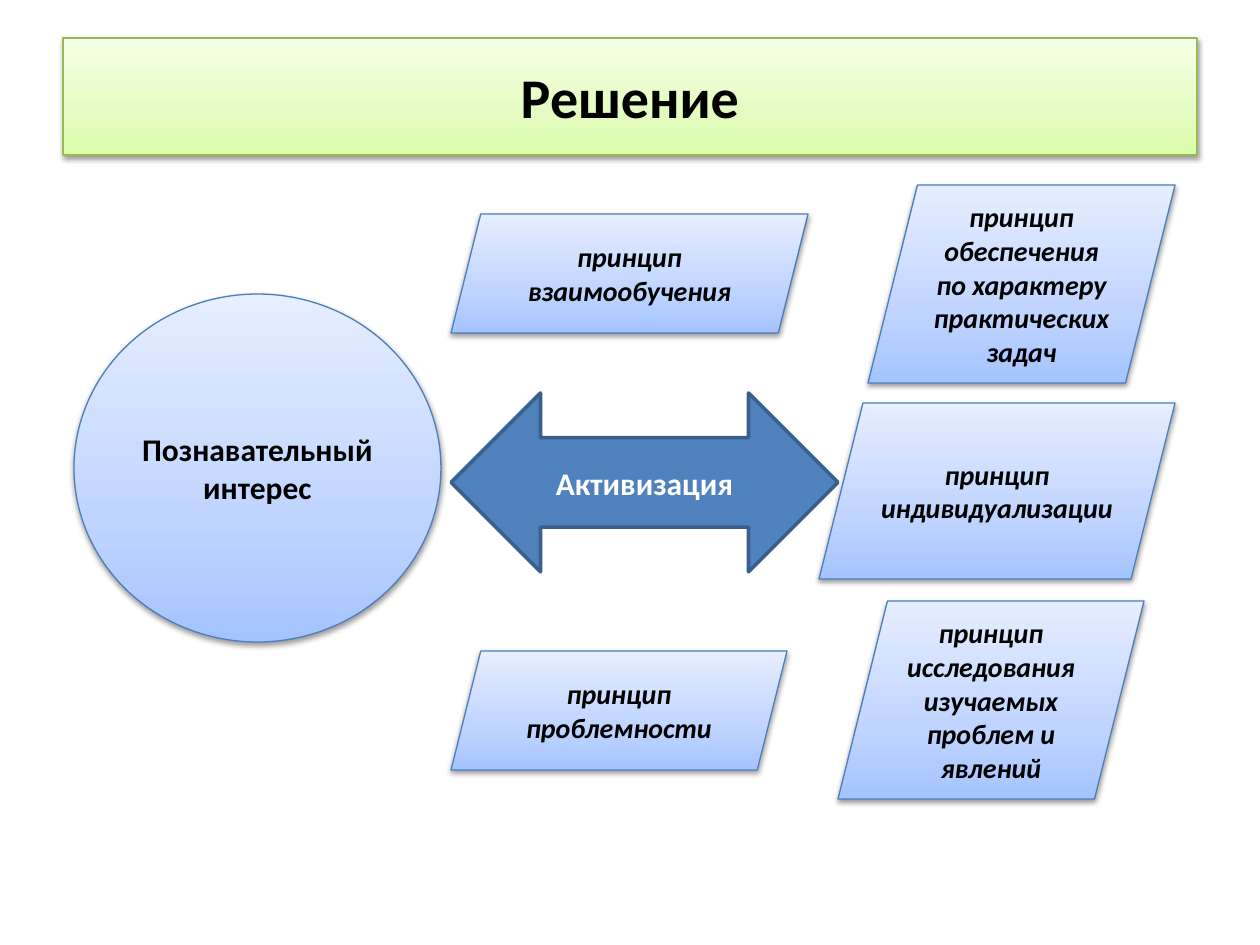
"""Build the slide on principles that activate cognitive interest."""
from copy import deepcopy

from lxml import etree
from pptx import Presentation
from pptx.dml.color import RGBColor
from pptx.enum.shapes import MSO_SHAPE
from pptx.enum.text import MSO_ANCHOR, PP_ALIGN
from pptx.oxml.ns import qn
from pptx.util import Emu, Pt

RECT, OVAL = MSO_SHAPE.RECTANGLE, MSO_SHAPE.OVAL
SLANT, ARROW = MSO_SHAPE.PARALLELOGRAM, MSO_SHAPE.LEFT_RIGHT_ARROW
MIDDLE, CENTER = MSO_ANCHOR.MIDDLE, PP_ALIGN.CENTER

BLACK = RGBColor(0x00, 0x00, 0x00)
WHITE = RGBColor(0xFF, 0xFF, 0xFF)
STEEL = RGBColor(0x4F, 0x81, 0xBD)
NAVY = RGBColor(0x3A, 0x5F, 0x8C)
BLUE = RGBColor(0x4B, 0x7E, 0xBC)
GREEN = RGBColor(0x98, 0xB9, 0x55)
LIMES = (RGBColor(0xDA, 0xFD, 0xA7), RGBColor(0xE4, 0xFC, 0xC2), RGBColor(0xF5, 0xFF, 0xE7))
SKIES = (RGBColor(0xA4, 0xC4, 0xFF), RGBColor(0xBF, 0xD4, 0xFF), RGBColor(0xE6, 0xEE, 0xFF))
STOPS = (0, 0.35, 1)

STYLES = {
    "title": dict(kind=RECT, fill=LIMES, line=GREEN, width=0.75,
                  font=dict(size=Pt(32), color=BLACK, italic=False)),
    "goal": dict(kind=OVAL, fill=SKIES, line=BLUE, width=0.75,
                 font=dict(size=Pt(18), color=BLACK, italic=False)),
    "rule": dict(kind=SLANT, fill=SKIES, line=BLUE, width=0.75,
                 font=dict(size=Pt(16), color=BLACK, italic=True)),
    "link": dict(kind=ARROW, fill=STEEL, line=NAVY, width=2,
                 font=dict(size=Pt(18), color=WHITE, italic=False)),
}

PARTS = [
    ("title", "Решение", (63, 38, 1134, 117)),
    ("goal", "Познавательный интерес", (74, 294, 367, 348)),
    ("rule", "принцип взаимообучения", (451, 214, 357, 119)),
    ("rule", "принцип проблемности", (451, 651, 336, 119)),
    ("rule", "принцип обеспечения по характеру практических задач", (868, 185, 307, 198)),
    ("rule", "принцип исследования изучаемых проблем и явлений", (838, 601, 306, 198)),
    ("rule", "принцип индивидуализации", (819, 403, 356, 176)),
    ("link", "Активизация", (451, 393, 387, 179)),
]


def px(count):
    return Emu(round(count * 914400 / 126))


def blend(shape, colors):
    shape.fill.gradient()
    shape.fill.gradient_angle = 90
    stops = shape._element.spPr.find(".//" + qn("a:gsLst"))
    stops.append(deepcopy(stops[-1]))
    for stop, place, color in zip(shape.fill.gradient_stops, STOPS, colors):
        stop.position = place
        stop.color.rgb = color


def shade(shape):
    effects = shape._element.spPr.find(qn("a:effectLst"))
    outer = etree.SubElement(effects, qn("a:outerShdw"), blurRad="40000",
                             dist="20000", dir="5400000", rotWithShape="0")
    color = etree.SubElement(outer, qn("a:srgbClr"), val=str(BLACK))
    etree.SubElement(color, qn("a:alpha"), val="38000")


def write(shape, text, style):
    frame = shape.text_frame
    frame.word_wrap = True
    frame.vertical_anchor = MIDDLE
    para = frame.paragraphs[0]
    para.alignment = CENTER
    run = para.add_run()
    run.text = text
    for key, value in dict(style, name="Calibri", bold=True).items():
        if key == "color":
            run.font.color.rgb = value
        else:
            setattr(run.font, key, value)


def draw(slide, name, text, box):
    style = STYLES[name]
    shape = slide.shapes.add_shape(style["kind"], *map(px, box))
    shape.shadow.inherit = False
    shape.line.color.rgb = style["line"]
    shape.line.width = Pt(style["width"])
    if name == "link":
        shape.fill.solid()
        shape.fill.fore_color.rgb = style["fill"]
    else:
        blend(shape, style["fill"])
        shade(shape)
    write(shape, text, style["font"])


def main():
    deck = Presentation()
    deck.slide_width, deck.slide_height = px(1260), px(945)
    slide = deck.slides.add_slide(deck.slide_layouts[6])
    for part in PARTS:
        draw(slide, *part)
    deck.save("out.pptx")


if __name__ == "__main__":
    main()
